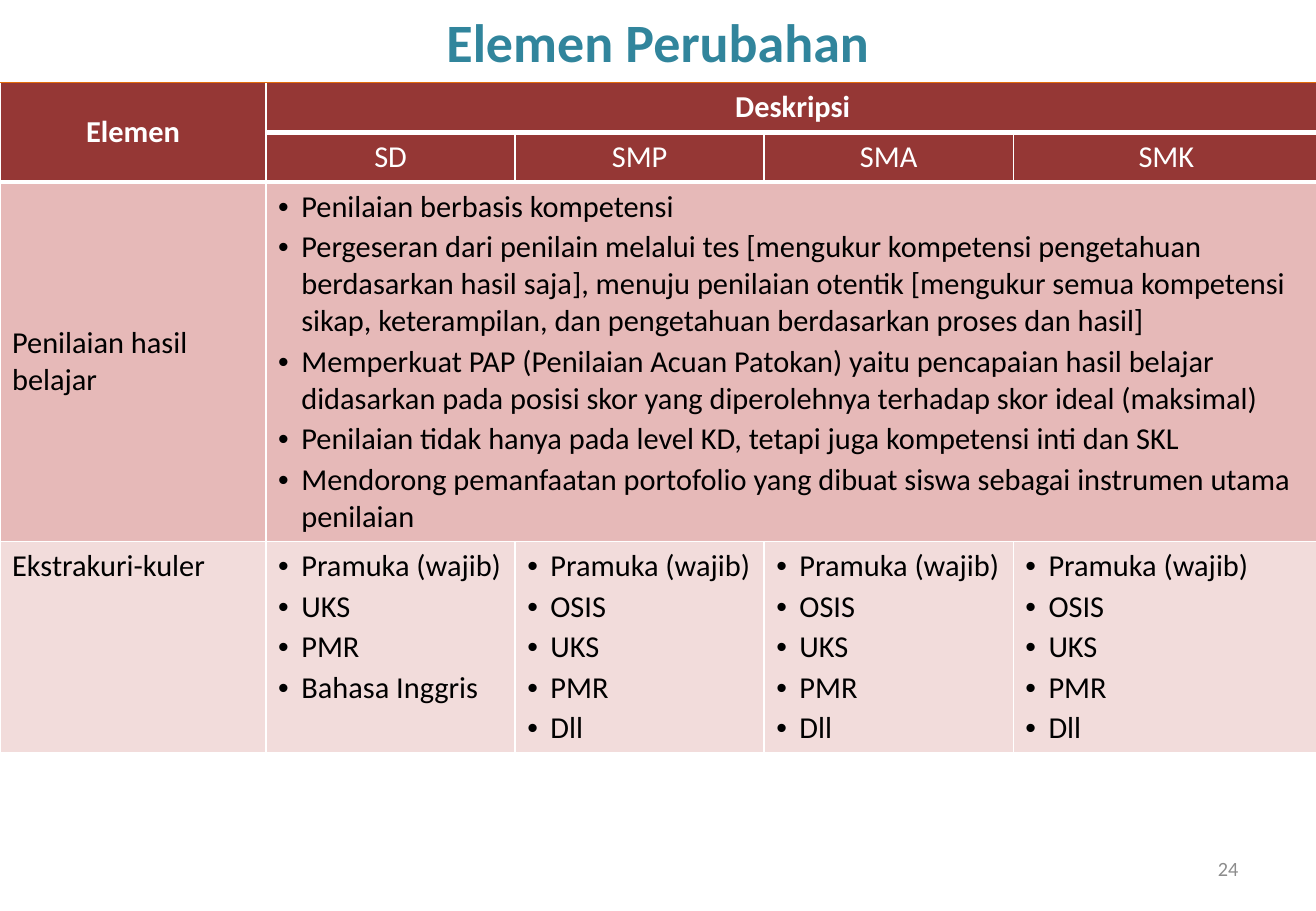
from lxml.etree import SubElement
from pptx import Presentation
from pptx.dml.color import RGBColor
from pptx.enum.shapes import MSO_CONNECTOR
from pptx.enum.text import MSO_ANCHOR, PP_ALIGN
from pptx.oxml.ns import qn
from pptx.util import Inches, Pt

COLORS = {
    "title": "31859C", "rule": "E46C0A", "header": "953735", "assessment": "E6B9B8",
    "activity": "F2DCDB", "white": "FFFFFF", "black": "000000", "number": "8C8C8C",
}
FONT = "Calibri"
WIDTH, HEIGHT = 10.83, 7.5
TITLE_HEIGHT = 0.68
TITLE_MARGIN = 0.54
COLUMNS = [2.19, 2.05, 2.05, 2.05, 2.52]
ROWS = [0.41, 0.41, 2.96, 1.74]
BULLET_INDENT = 0.19

TITLE = "Elemen Perubahan"
PAGE_NUMBER = "24"
SCHOOLS = ["SD", "SMP", "SMA", "SMK"]
ASSESSMENT = [
    "Penilaian berbasis kompetensi",
    "Pergeseran dari penilain melalui tes [mengukur kompetensi pengetahuan berdasarkan hasil saja], "
    "menuju penilaian otentik [mengukur semua kompetensi sikap, keterampilan, dan pengetahuan "
    "berdasarkan proses dan hasil]",
    "Memperkuat PAP (Penilaian Acuan Patokan) yaitu pencapaian hasil belajar didasarkan pada "
    "posisi skor yang diperolehnya terhadap skor ideal (maksimal)",
    "Penilaian tidak hanya pada level KD, tetapi juga kompetensi inti dan SKL",
    "Mendorong pemanfaatan portofolio yang dibuat siswa sebagai instrumen utama penilaian",
]
PRIMARY = ["Pramuka (wajib)", "UKS", "PMR", "Bahasa Inggris"]
SECONDARY = ["Pramuka (wajib)", "OSIS", "UKS", "PMR", "Dll"]
CONTENT = [
    ["Elemen", "Deskripsi", None, None, None],
    [None, *SCHOOLS],
    ["Penilaian hasil belajar", ASSESSMENT, None, None, None],
    ["Ekstrakuri-kuler", PRIMARY, SECONDARY, SECONDARY, SECONDARY],
]
MERGES = [((0, 0), (1, 0)), ((0, 1), (0, 4)), ((2, 1), (2, 4))]
ROW_FILLS = ["header", "header", "assessment", "activity"]


def style(para, size, color, bold=False, align=PP_ALIGN.LEFT):
    para.alignment = align
    para.font.name = FONT
    para.font.size = Pt(size)
    para.font.bold = bold
    para.font.color.rgb = RGBColor.from_string(COLORS[color])


def add_text(page, text, left, top, width, height, size, color, bold, align):
    box = page.shapes.add_textbox(Inches(left), Inches(top), Inches(width), Inches(height))
    frame = box.text_frame
    frame.word_wrap = True
    frame.vertical_anchor = MSO_ANCHOR.MIDDLE
    frame.text = text
    style(frame.paragraphs[0], size, color, bold, align)


def add_bullet(para):
    para.space_before = Pt(2)
    properties = para._p.get_or_add_pPr()
    properties.set("marL", str(Inches(BULLET_INDENT)))
    properties.set("indent", str(-Inches(BULLET_INDENT)))
    SubElement(properties, qn("a:buFont"), typeface="Arial")
    SubElement(properties, qn("a:buChar"), char="•")


def set_borders(cell, row):
    widths = {"lnL": 1, "lnR": 1, "lnT": 3 if row in (1, 2) else 1, "lnB": 3 if row < 2 else 1}
    for side, width in widths.items():
        line = SubElement(cell._tc.get_or_add_tcPr(), qn(f"a:{side}"), w=str(Pt(width)))
        fill = SubElement(line, qn("a:solidFill"))
        SubElement(fill, qn("a:srgbClr"), val=COLORS["white"])


def fill_cell(cell, content, row):
    set_borders(cell, row)
    cell.fill.solid()
    cell.fill.fore_color.rgb = RGBColor.from_string(COLORS[ROW_FILLS[row]])
    cell.vertical_anchor = MSO_ANCHOR.TOP if row == 3 else MSO_ANCHOR.MIDDLE
    if content is None:
        return
    bulleted = isinstance(content, list)
    cell.text = "\n".join(content) if bulleted else content
    for para in cell.text_frame.paragraphs:
        if row < 2:
            style(para, 18, "white", row == 0, PP_ALIGN.CENTER)
        else:
            style(para, 18, "black")
        if bulleted:
            add_bullet(para)


def add_elements_table(page):
    table = page.shapes.add_table(
        len(ROWS), len(COLUMNS), 0, Inches(TITLE_HEIGHT), Inches(sum(COLUMNS)), Inches(sum(ROWS))
    ).table
    table.first_row = table.horz_banding = False
    for column, width in zip(table.columns, COLUMNS):
        column.width = Inches(width)
    for row, height in zip(table.rows, ROWS):
        row.height = Inches(height)
    for start, end in MERGES:
        table.cell(*start).merge(table.cell(*end))
    for row, contents in enumerate(CONTENT):
        for column, content in enumerate(contents):
            fill_cell(table.cell(row, column), content, row)


def add_rule(page):
    rule = page.shapes.add_connector(
        MSO_CONNECTOR.STRAIGHT, 0, Inches(TITLE_HEIGHT), Inches(WIDTH), Inches(TITLE_HEIGHT)
    )
    rule.line.color.rgb = RGBColor.from_string(COLORS["rule"])
    rule.line.width = Pt(0.75)
    SubElement(rule._element.spPr, qn("a:effectLst"))


def main():
    deck = Presentation()
    deck.slide_width, deck.slide_height = Inches(WIDTH), Inches(HEIGHT)
    page = deck.slides.add_slide(deck.slide_layouts[6])
    add_elements_table(page)
    add_text(page, PAGE_NUMBER, 7.76, 6.95, 2.53, 0.4, 12, "number", False, PP_ALIGN.RIGHT)
    add_text(page, TITLE, TITLE_MARGIN, 0, WIDTH - 2 * TITLE_MARGIN, TITLE_HEIGHT,
             32, "title", True, PP_ALIGN.CENTER)
    add_rule(page)
    deck.save("out.pptx")


if __name__ == "__main__":
    main()
